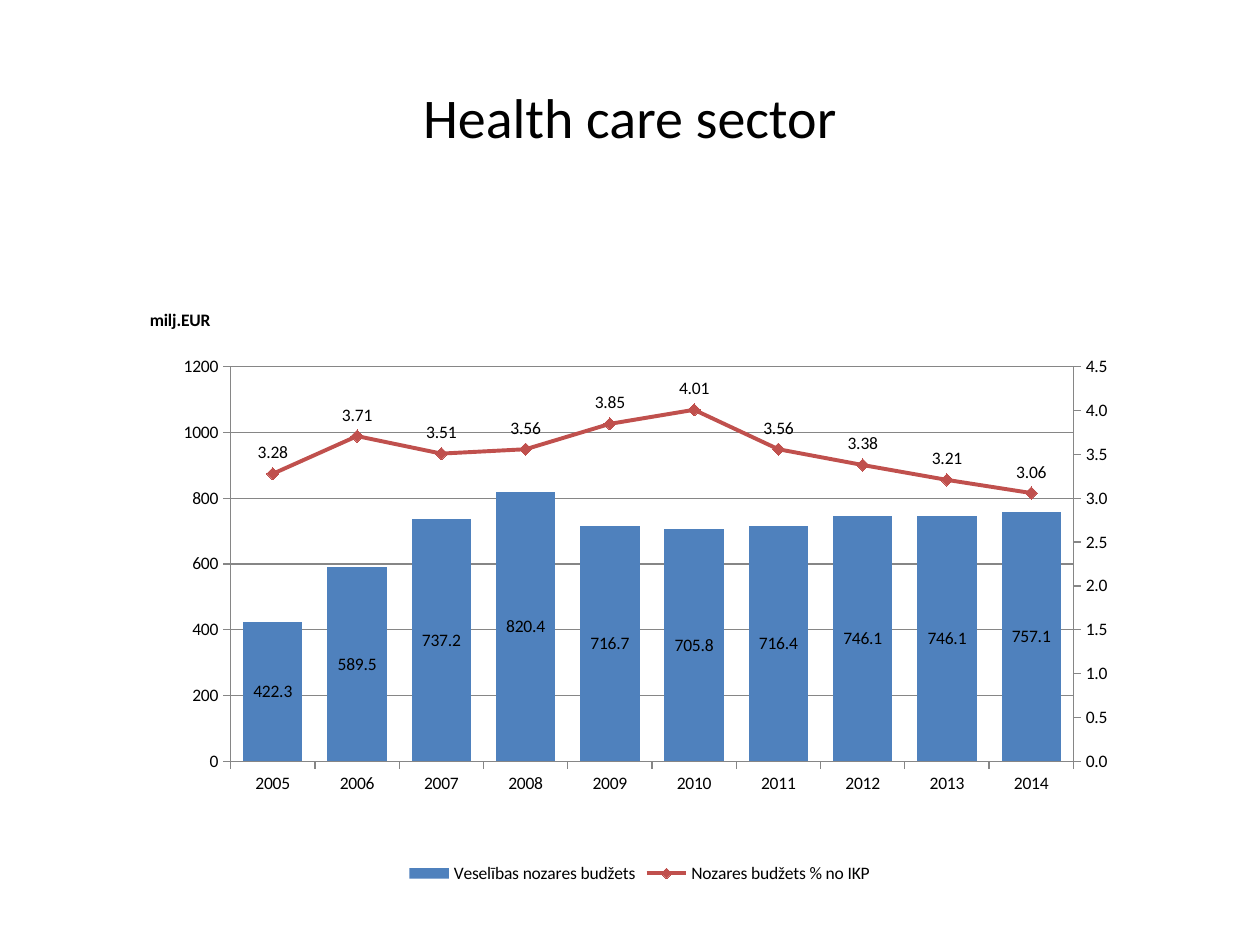
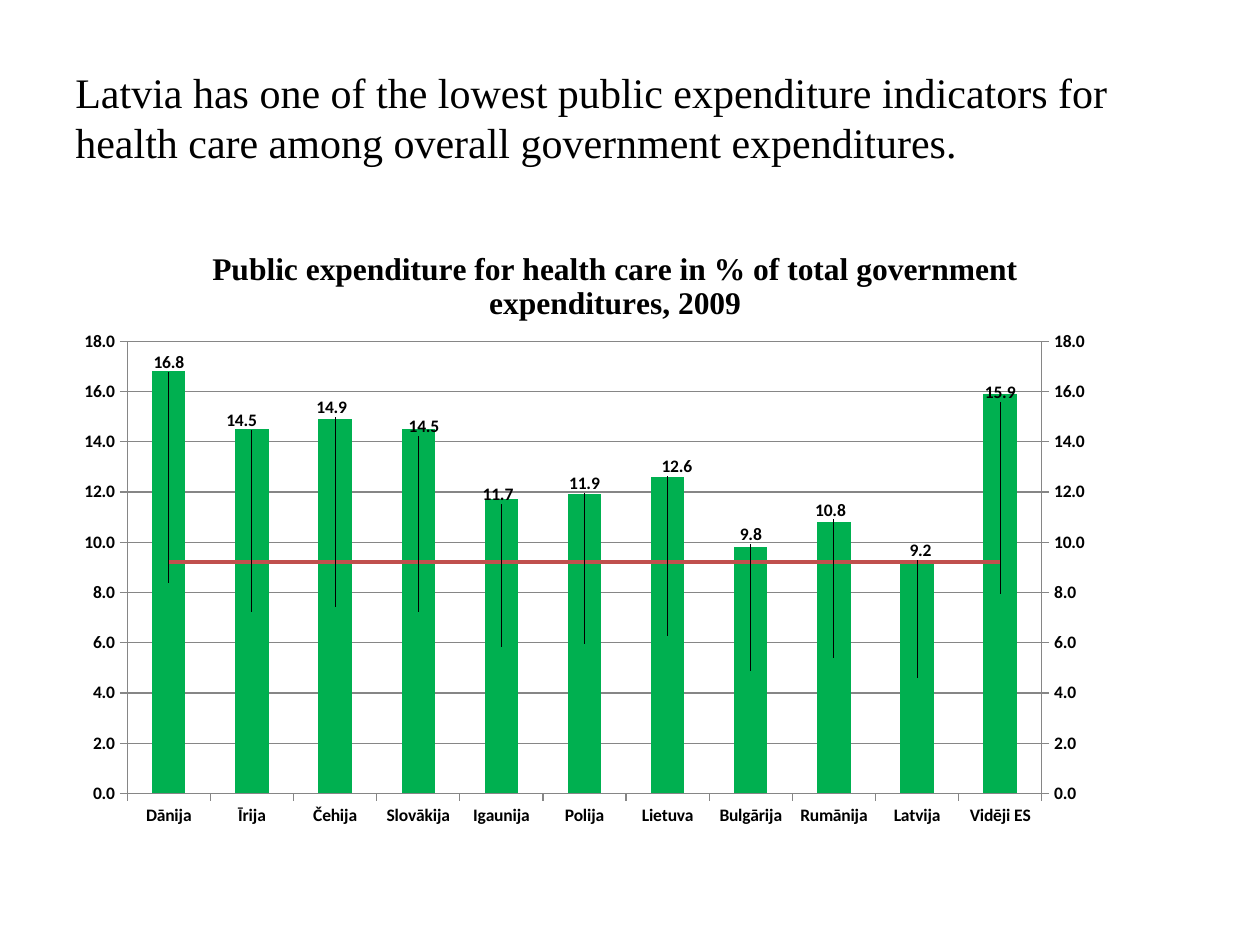
from copy import deepcopy
from pptx import Presentation
from pptx import util as u
from pptx.chart.axis import ValueAxis
from pptx.chart.data import CategoryChartData
from pptx.dml.color import RGBColor
from pptx.enum import chart as ch, text
from pptx.oxml import parse_xml
from pptx.oxml.ns import nsdecls, qn

C = {"black": "000000", "grid": "868686", "blue": "4F81BD", "green": "00B050", "red": "C0504D"}
BODY, SERIF = "Calibri", "Times New Roman"


def write(tf, words, size=10, font=BODY, bold=False, align=text.PP_ALIGN.CENTER):
    p = tf.paragraphs[0]
    p.alignment = align
    r = p.add_run()
    r.text = words
    r.font.size, r.font.name, r.font.bold = u.Pt(size), font, bold
    r.font.color.rgb = RGBColor.from_string(C["black"])


def layout_xml(x, y, w=None, h=None):
    tags = ""
    if w:
        tags = '<c:layoutTarget val="inner"/><c:xMode val="edge"/><c:yMode val="edge"/>'
    tags += f'<c:x val="{x:.3f}"/><c:y val="{y:.3f}"/>'
    if w:
        tags += f'<c:w val="{w}"/><c:h val="{h}"/>'
    return parse_xml(f'<c:layout {nsdecls("c")}><c:manualLayout>{tags}</c:manualLayout></c:layout>')


slides = [
    dict(title="Health care sector", size=32, font=BODY, align=text.PP_ALIGN.CENTER,
         at=(1.06, 2.25, 8.03, 4.8), plot=(0.096, 0.138, 0.833, 0.652),
         cats=[str(y) for y in range(2005, 2015)],
         names=("Veselības nozares budžets", "Nozares budžets % no IKP"),
         bars=[422.3, 589.5, 737.2, 820.4, 716.7, 705.8, 716.4, 746.1, 746.1, 757.1],
         line=[3.28, 3.71, 3.51, 3.56, 3.85, 4.01, 3.56, 3.38, 3.21, 3.06],
         left=(1200, 200, "0"), right=(4.5, 0.5, "0.0"),
         color="blue", gap=42, bold=False, axis_title="milj.EUR", heading=None, shifts=[]),
    dict(title="Latvia has one of the lowest public expenditure indicators for health care "
               "among overall government expenditures.",
         size=24, font=SERIF, align=text.PP_ALIGN.LEFT,
         at=(0.59, 1.7, 9.13, 5.12), plot=(0.046, 0.197, 0.795, 0.701),
         cats=["Dānija", "Īrija", "Čehija", "Slovākija", "Igaunija", "Polija", "Lietuva",
               "Bulgārija", "Rumānija", "Latvija", "Vidēji ES"],
         names=("Series 1", "Series 2"),
         bars=[16.8, 14.5, 14.9, 14.5, 11.7, 11.9, 12.6, 9.8, 10.8, 9.2, 15.9],
         line=[9.2] * 11,
         left=(18, 2, "0.0"), right=(18, 2, "#,##0.0"),
         color="green", gap=150, bold=True, axis_title=None,
         heading="Public expenditure for health care in % of total government expenditures, 2009",
         # sideways shift of each label, and its lift above the bar in axis units
         shifts=[(0, 0.35), (-0.009, 0.34), (-0.003, 0.46), (0.005, 0.1), (-0.003, 0.19),
                 (0, 0.43), (0.008, 0.41), (0, 0.5), (-0.003, 0.49), (0.003, 0.46), (0, 0.05)]),
]

prs = Presentation()
prs.slide_width, prs.slide_height = u.Inches(10), u.Inches(7.5)

for d in slides:
    s = prs.slides.add_slide(prs.slide_layouts[6])

    # Slide title
    tf = s.shapes.add_textbox(*map(u.Inches, (0.5, 0.3, 9, 1.25))).text_frame
    tf.word_wrap = True
    tf.vertical_anchor = text.MSO_ANCHOR.MIDDLE
    write(tf, d["title"], d["size"], d["font"], align=d["align"])

    # Stacked columns
    data = CategoryChartData()
    data.categories = d["cats"]
    for name, key in zip(d["names"], ("bars", "line")):
        data.add_series(name, d[key])
    chart = s.shapes.add_chart(ch.XL_CHART_TYPE.COLUMN_STACKED,
                               *map(u.Inches, d["at"]), data).chart
    chart.font.size, chart.font.name = u.Pt(10), BODY
    chart.font.color.rgb = RGBColor.from_string(C["black"])
    area = chart.plots[0]._element.getparent()
    for old in area.findall(qn("c:layout")):
        area.remove(old)
    area.insert(0, layout_xml(*d["plot"]))

    # Second series as a line on its own axes
    bar_xml = chart.plots[0]._element
    line_xml = parse_xml(
        f'<c:lineChart {nsdecls("c")}><c:grouping val="standard"/><c:varyColors val="0"/>'
        '<c:marker val="1"/><c:axId val="5001"/><c:axId val="5002"/></c:lineChart>')
    ser = bar_xml.findall(qn("c:ser"))[1]
    for extra in ser.findall(qn("c:invertIfNegative")):
        ser.remove(extra)
    line_xml.insert(2, ser)
    bar_xml.addnext(line_xml)
    cat, val = chart.category_axis, chart.value_axis
    val.has_major_gridlines = False
    cat2, val2 = deepcopy(cat._element), deepcopy(val._element)
    val._element.addnext(val2)
    val2.addnext(cat2)
    for ax, own, cross in ((cat2, "5001", "5002"), (val2, "5002", "5001")):
        ax.find(qn("c:axId")).set("val", own)
        ax.find(qn("c:crossAx")).set("val", cross)
    cat2.find(qn("c:delete")).set("val", "1")
    val2.find(qn("c:axPos")).set("val", "r")
    val2.find(qn("c:crosses")).set("val", "max")
    right = ValueAxis(val2)

    # Axes and gridlines
    for ax, (top, step, fmt) in ((val, d["left"]), (right, d["right"])):
        ax.minimum_scale, ax.maximum_scale, ax.major_unit = 0, top, step
        ax.tick_labels.number_format = fmt
        ax.tick_labels.number_format_is_linked = False
    val.has_major_gridlines = True
    for ax in (cat, val, right):
        ax.major_tick_mark = ch.XL_TICK_MARK.OUTSIDE
        ax.tick_labels.font.bold = d["bold"]
        ax.tick_labels.font.size = u.Pt(10)
    for fmt in (cat.format, val.format, right.format, val.major_gridlines.format):
        fmt.line.color.rgb = RGBColor.from_string(C["grid"])
        fmt.line.width = u.Pt(0.75)

    # Series colours
    columns, line_plot = chart.plots
    columns.gap_width, columns.overlap = d["gap"], 100
    columns.vary_by_categories = False
    bars, line = columns.series[0], line_plot.series[0]
    bars.format.fill.solid()
    bars.format.fill.fore_color.rgb = RGBColor.from_string(C[d["color"]])
    line.smooth = False
    line.format.line.color.rgb = RGBColor.from_string(C["red"])
    line.format.line.width = u.Pt(2.25)
    line.marker.style = ch.XL_MARKER_STYLE.NONE

    # Value labels
    labels = [(bars, "0.0", ch.XL_LABEL_POSITION.CENTER)]
    if not d["shifts"]:
        labels.append((line, "0.00", ch.XL_LABEL_POSITION.ABOVE))
        line.marker.style, line.marker.size = ch.XL_MARKER_STYLE.DIAMOND, 7
        line.marker.format.fill.solid()
        line.marker.format.fill.fore_color.rgb = RGBColor.from_string(C["red"])
        line.marker.format.line.color.rgb = RGBColor.from_string(C["red"])
    for series, fmt, pos in labels:
        dl = series.data_labels
        dl.show_value, dl.position = True, pos
        dl.number_format, dl.number_format_is_linked = fmt, False
        dl.font.bold, dl.font.size = d["bold"], u.Pt(10)
    for i, (dx, lift) in enumerate(d["shifts"]):
        font = bars.points[i].data_label.font
        font.bold, font.size = True, u.Pt(10)
        dy = -(d["bars"][i] / 2 + lift) / d["left"][0] * d["plot"][3]
        idx = bars._element.xpath(f'c:dLbls/c:dLbl/c:idx[@val="{i}"]')[0]
        idx.addnext(layout_xml(dx, dy))

    # Legend, axis title and chart heading
    chart.has_legend = not d["heading"]
    chart.has_title = bool(d["heading"])
    if chart.has_legend:
        chart.legend.position = ch.XL_LEGEND_POSITION.BOTTOM
        chart.legend.include_in_layout = False
    if d["heading"]:
        title, words, size, font, place = chart.chart_title, d["heading"], 18, SERIF, (0.115, 0.045)
    else:
        title, words, size, font, place = val.axis_title, d["axis_title"], 10, BODY, (0.013, 0.037)
    write(title.text_frame, words, size, font, True)
    body = title._element.find(".//" + qn("a:bodyPr"))
    body.set("rot", "0")
    body.set("vert", "horz")
    for old in title._element.findall(qn("c:layout")):
        title._element.remove(old)
    spot = layout_xml(*place)
    for mode in ("yMode", "xMode"):
        spot[0].insert(0, parse_xml(f'<c:{mode} {nsdecls("c")} val="edge"/>'))
    title._element.find(qn("c:tx")).addnext(spot)
    if d["heading"]:
        title._element.find(qn("c:overlay")).set("val", "1")

prs.save("out.pptx")
